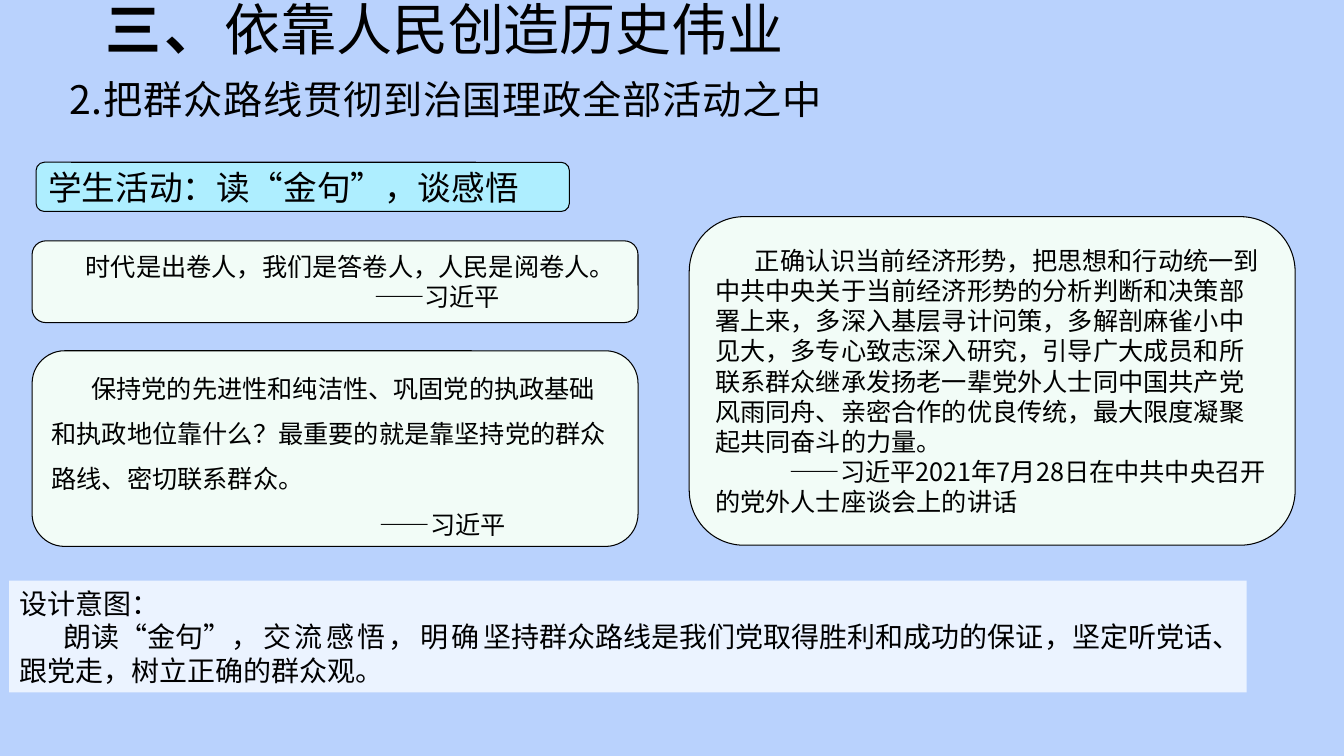
"""Build the slide on relying on the people, with its quotations and teaching aim."""
from dataclasses import dataclass

from lxml import etree
from pptx import Presentation
from pptx.dml.color import RGBColor
from pptx.enum.shapes import MSO_SHAPE
from pptx.enum.text import MSO_ANCHOR, MSO_AUTO_SIZE, PP_ALIGN
from pptx.oxml.ns import qn
from pptx.util import Cm, Pt

RECTANGLE = MSO_SHAPE.RECTANGLE
ROUNDED = MSO_SHAPE.ROUNDED_RECTANGLE
ALTERNATE_PROCESS = MSO_SHAPE.FLOWCHART_ALTERNATE_PROCESS
MIDDLE, TOP = MSO_ANCHOR.MIDDLE, MSO_ANCHOR.TOP
LEFT = PP_ALIGN.LEFT
NO_AUTOFIT = MSO_AUTO_SIZE.NONE

FONT = "Noto Sans CJK SC"
BLACK = "000000"
BACKGROUND = "B9D2FD"
MINT = "F2FCF7"
CYAN = "AEEEFF"
PALE_BLUE = "EBF3FF"
TITLE_LAYOUT = 5
QUOTE_LEFT, QUOTE_WIDTH = 0.81, 15.27
QUOTE_INDENT, AUTHOR_INDENT = 1.0, 8.27


@dataclass(frozen=True)
class Span:
    """A stretch of text with one letter spacing, in points."""
    text: str
    spacing: float = 0
    bold: bool = False


@dataclass(frozen=True)
class Line:
    """A paragraph with its first-line indent in centimetres."""
    spans: tuple[Span, ...]
    indent: float = 0


@dataclass(frozen=True)
class Panel:
    """A filled box of text, placed in centimetres."""
    box: tuple[float, float, float, float]
    geometry: MSO_SHAPE
    fill: str
    size: float
    lines: tuple[Line, ...]
    outlined: bool = True
    line_spacing: float = 1.0


TITLE = (Line((Span("三、", 2.4, True), Span("依靠人民创造历史伟业"))),)
SUBTITLE = (Line((Span("2.把群众路线贯彻到治国理政全部活动之中", 0.6),), 0.97),)
AUTHOR = Line((Span("——习近平"),), AUTHOR_INDENT)

PANELS = (
    Panel((0.23, 14.63, 31.19, 2.82), RECTANGLE, PALE_BLUE, 20, (
        Line((Span("设计意图："),)),
        Line((Span("朗读“金句”"), Span("，交流感悟，明确", 2.4),
              Span("坚持群众路线是我们党取得胜利和成功的保证，坚定听党话、"
                   "跟党走，树立正确的群众观。")), 1.12),
    ), outlined=False),
    Panel((0.91, 4.09, 13.44, 1.24), ALTERNATE_PROCESS, CYAN, 24, (
        Line((Span("学生活动：读“金句”，谈感悟"),)),
    )),
    Panel((17.37, 5.46, QUOTE_WIDTH, 8.28), ROUNDED, MINT, 18, (
        Line((Span("正确认识当前经济形势，把思想和行动统一到中共中央关于当前经济形势的"
                   "分析判断和决策部署上来，多深入基层寻计问策，多解剖麻雀小中见大，"
                   "多专心致志深入研究，引导广大成员和所联系群众继承发扬老一辈党外人士"
                   "同中国共产党风雨同舟、亲密合作的优良传统，最大限度凝聚起共同奋斗的"
                   "力量。"),), QUOTE_INDENT),
        Line((Span("——习近平2021年7月28日在中共中央召开的党外人士座谈会上的讲话"),), 1.88),
    )),
    Panel((QUOTE_LEFT, 6.07, QUOTE_WIDTH, 2.06), ROUNDED, MINT, 18, (
        Line((Span("时代是出卷人，我们是答卷人，人民是阅卷人。"),), QUOTE_INDENT),
        AUTHOR,
    )),
    Panel((QUOTE_LEFT, 8.84, QUOTE_WIDTH, 4.93), ROUNDED, MINT, 18, (
        Line((Span("保持党的先进性和纯洁性、巩固党的执政基础和执政地位靠什么？"
                   "最重要的就是靠坚持党的群众路线、密切联系群众。"),), QUOTE_INDENT),
        AUTHOR,
    ), line_spacing=1.5),
)


def color(value: str) -> RGBColor:
    """Turn a hex string into a colour."""
    return RGBColor.from_string(value)


def write_lines(text_frame, lines: tuple[Line, ...], size: float,
                anchor: MSO_ANCHOR = MIDDLE, line_spacing: float = 1.0) -> None:
    """Fill a text frame with formatted paragraphs."""
    text_frame.word_wrap = True
    text_frame.auto_size = NO_AUTOFIT
    text_frame.vertical_anchor = anchor
    text_frame.text = "\n".join("" for _ in lines)
    for paragraph, line in zip(text_frame.paragraphs, lines):
        paragraph.alignment = LEFT
        paragraph.line_spacing = line_spacing
        paragraph._p.get_or_add_pPr().set("indent", str(Cm(line.indent)))
        for span in line.spans:
            run = paragraph.add_run()
            run.text = span.text
            run.font.name = FONT
            run.font.size = Pt(size)
            run.font.bold = span.bold
            run.font.color.rgb = color(BLACK)
            properties = run._r.get_or_add_rPr()
            properties.set("spc", str(round(span.spacing * 100)))
            latin = properties.find(qn("a:latin"))
            east_asian = etree.Element(qn("a:ea"), typeface=FONT)
            latin.addnext(east_asian)


def add_panel(slide, panel: Panel) -> None:
    """Draw one filled box with its text."""
    shape = slide.shapes.add_shape(panel.geometry, *map(Cm, panel.box))
    shape.shadow.inherit = False
    shape.fill.solid()
    shape.fill.fore_color.rgb = color(panel.fill)
    if panel.outlined:
        shape.line.color.rgb = color(BLACK)
        shape.line.width = Pt(0.75)
    else:
        shape.line.fill.background()
    write_lines(shape.text_frame, panel.lines, panel.size, line_spacing=panel.line_spacing)


def main() -> None:
    """Build and save the presentation."""
    presentation = Presentation()
    presentation.slide_width, presentation.slide_height = Cm(33.87), Cm(19.05)
    slide = presentation.slides.add_slide(presentation.slide_layouts[TITLE_LAYOUT])
    slide.background.fill.solid()
    slide.background.fill.fore_color.rgb = color(BACKGROUND)

    title = slide.shapes.title
    title.left, title.top, title.width, title.height = map(Cm, (2.41, -0.28, 28.5, 1.96))
    write_lines(title.text_frame, TITLE, 40)

    subtitle = slide.shapes.add_textbox(*map(Cm, (0.53, 1.9, 33, 1.8)))
    write_lines(subtitle.text_frame, SUBTITLE, 28, TOP, 0.9)

    for panel in PANELS:
        add_panel(slide, panel)
    presentation.save("out.pptx")


if __name__ == "__main__":
    main()
